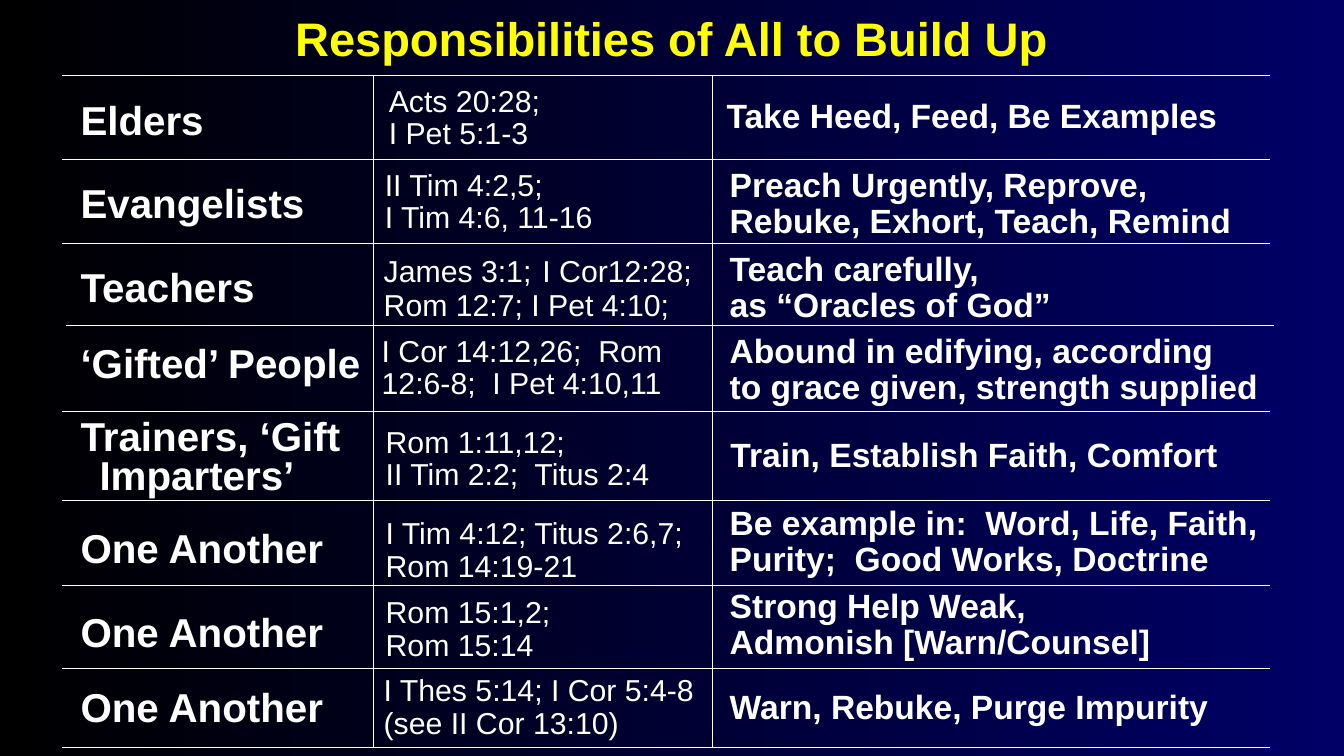
from lxml.etree import SubElement
from pptx import Presentation
from pptx.dml.color import RGBColor
from pptx.enum.shapes import MSO_CONNECTOR
from pptx.enum.text import MSO_ANCHOR, MSO_AUTO_SIZE, PP_ALIGN
from pptx.oxml.ns import qn
from pptx.util import Cm, Pt

BLACK = RGBColor(0x00, 0x00, 0x00)
NAVY = RGBColor(0x00, 0x00, 0x66)
WHITE = RGBColor(0xFF, 0xFF, 0xFF)
YELLOW = RGBColor(0xFF, 0xFF, 0x00)
FONT = "Arial"

TITLE_SIZE, LABEL_SIZE, DUTY_SIZE, REF_SIZE = 33.6, 28.8, 24, 21.6
TABLE_LEFT, TABLE_RIGHT = 1.57, 32.0
RULES = [1.91, 4.01, 6.13, 8.2, 10.37, 12.6, 14.75, 16.85, 18.84]
COLUMN_RULES = [9.42, 17.96]
SHIFTED_RULE, RULE_SHIFT = 8.2, 0.1

# (top, text) for each row; "\n" starts a paragraph, "\v" breaks a line
LABELS = [
    (2.12, "Elders"),
    (4.23, "Evangelists"),
    (6.35, "Teachers"),
    (8.26, "‘Gifted’ People"),
    (10.48, "Trainers, ‘Gift Imparters’"),
    (12.91, "One Another"),
    (15.03, "One Another"),
    (16.93, "One Another"),
]
TIGHT_LABEL = "Trainers, ‘Gift Imparters’"

# (left, top, height, runs), a run being (text, size, bold)
REFERENCES = [
    (9.55, 2.03, 1.93, [("Acts 20:28; \vI Pet 5:1-3", REF_SIZE, False)]),
    (9.45, 4.14, 1.93, [("II Tim 4:2,5;\vI Tim 4:6, 11-16", REF_SIZE, False)]),
    (9.42, 6.12, 2.16, [("James 3:1;", REF_SIZE, False), (" ", 28, True),
                        ("I Cor12:28; Rom 12:7; I Pet 4:10;", REF_SIZE, False)]),
    (9.37, 8.33, 1.93, [("I Cor 14:12,26;  Rom 12:6-8;  I Pet 4:10,11", REF_SIZE, False)]),
    (9.47, 10.62, 1.93, [("Rom 1:11,12;  \vII Tim 2:2;  Titus 2:4", REF_SIZE, False)]),
    (9.47, 12.93, 1.93, [("I Tim 4:12; Titus 2:6,7;  Rom 14:19-21", REF_SIZE, False)]),
    (9.47, 14.91, 1.93, [("Rom 15:1,2;  \vRom 15:14", REF_SIZE, False)]),
    (9.42, 16.89, 1.93, [("I Thes 5:14; I Cor 5:4-8  (see II Cor 13:10)", REF_SIZE, False)]),
]

DUTIES = [
    (18.06, 2.39, 1.17, "Take Heed, Feed, Be Examples"),
    (18.14, 4.11, 2.11, "Preach Urgently, Reprove,\nRebuke, Exhort, Teach, Remind"),
    (18.14, 6.22, 2.11, "Teach carefully, \vas “Oracles of God”"),
    (18.14, 8.28, 2.11, "Abound in edifying, according\nto grace given, strength supplied"),
    (18.16, 10.92, 1.17, "Train, Establish Faith, Comfort"),
    (18.14, 12.62, 2.11, "Be example in:  Word, Life, Faith,\nPurity;  Good Works, Doctrine"),
    (18.14, 14.71, 2.11, "Strong Help Weak, \vAdmonish [Warn/Counsel]"),
    (18.14, 17.27, 1.17, "Warn, Rebuke, Purge Impurity"),
]


def add_text(p, text, size, bold, color=WHITE):
    for i, line in enumerate(text.split("\v")):
        if i:
            p.add_line_break()
        r = p.add_run()
        r.text = line
        r.font.name = FONT
        r.font.size = Pt(size)
        r.font.bold = bold
        r.font.color.rgb = color


def add_box(s, left, top, width, height, anchor, wrap=True):
    sp = s.shapes.add_textbox(Cm(left), Cm(top), Cm(width), Cm(height))
    tf = sp.text_frame
    tf.word_wrap = wrap
    tf.vertical_anchor = anchor
    return tf


def add_label(s, top, text):
    tf = add_box(s, 1.78, top, 8.5, 1.91, MSO_ANCHOR.TOP)
    p = tf.paragraphs[0]
    tight = text == TIGHT_LABEL
    hang = Cm(0.48 if tight else 0.94)
    pPr = p._p.get_or_add_pPr()
    pPr.set("marL", str(hang))
    pPr.set("indent", str(-hang))
    if tight:
        p.line_spacing = 0.8
    else:
        tf.margin_top = Cm(0.27)
    add_text(p, text, LABEL_SIZE, True)


def add_reference(s, left, top, height, runs):
    p = add_box(s, left, top, 8.6, height, MSO_ANCHOR.MIDDLE).paragraphs[0]
    p.line_spacing = 0.9
    for text, size, bold in runs:
        add_text(p, text, size, bold)


def add_duty(s, left, top, height, text):
    tf = add_box(s, left, top, 13.94, height, MSO_ANCHOR.MIDDLE)
    for i, line in enumerate(text.split("\n")):
        p = tf.add_paragraph() if i else tf.paragraphs[0]
        p.line_spacing = 0.9
        add_text(p, line, DUTY_SIZE, True)


def add_rule(s, x1, y1, x2, y2):
    line = s.shapes.add_connector(MSO_CONNECTOR.STRAIGHT, Cm(x1), Cm(y1), Cm(x2), Cm(y2))
    line.line.color.rgb = WHITE
    line.line.width = Pt(0.75)
    SubElement(line._element.spPr, qn("a:effectLst"))


def set_background(s):
    fill = s.background.fill
    fill.gradient()
    fill.gradient_angle = 0
    for stop, color in zip(fill.gradient_stops, (BLACK, NAVY)):
        stop.color.rgb = color


def set_title(s, text):
    sp = s.shapes.title
    sp.left, sp.top, sp.width, sp.height = Cm(4.23), Cm(0.21), Cm(25.4), Cm(1.48)
    tf = sp.text_frame
    tf.auto_size = MSO_AUTO_SIZE.NONE
    tf.vertical_anchor = MSO_ANCHOR.MIDDLE
    p = tf.paragraphs[0]
    p.alignment = PP_ALIGN.CENTER
    add_text(p, text, TITLE_SIZE, True, YELLOW)


def main():
    prs = Presentation()
    prs.slide_width, prs.slide_height = Cm(33.87), Cm(19.05)
    s = prs.slides.add_slide(prs.slide_layouts[5])
    set_background(s)
    set_title(s, "Responsibilities of All to Build Up")
    for y in RULES:
        shift = RULE_SHIFT if y == SHIFTED_RULE else 0
        add_rule(s, TABLE_LEFT + shift, y, TABLE_RIGHT + shift, y)
    for x in COLUMN_RULES:
        add_rule(s, x, RULES[0], x, RULES[-1])
    for label, reference, duty in zip(LABELS, REFERENCES, DUTIES):
        add_label(s, *label)
        add_reference(s, *reference)
        add_duty(s, *duty)
    prs.save("out.pptx")


if __name__ == "__main__":
    main()
